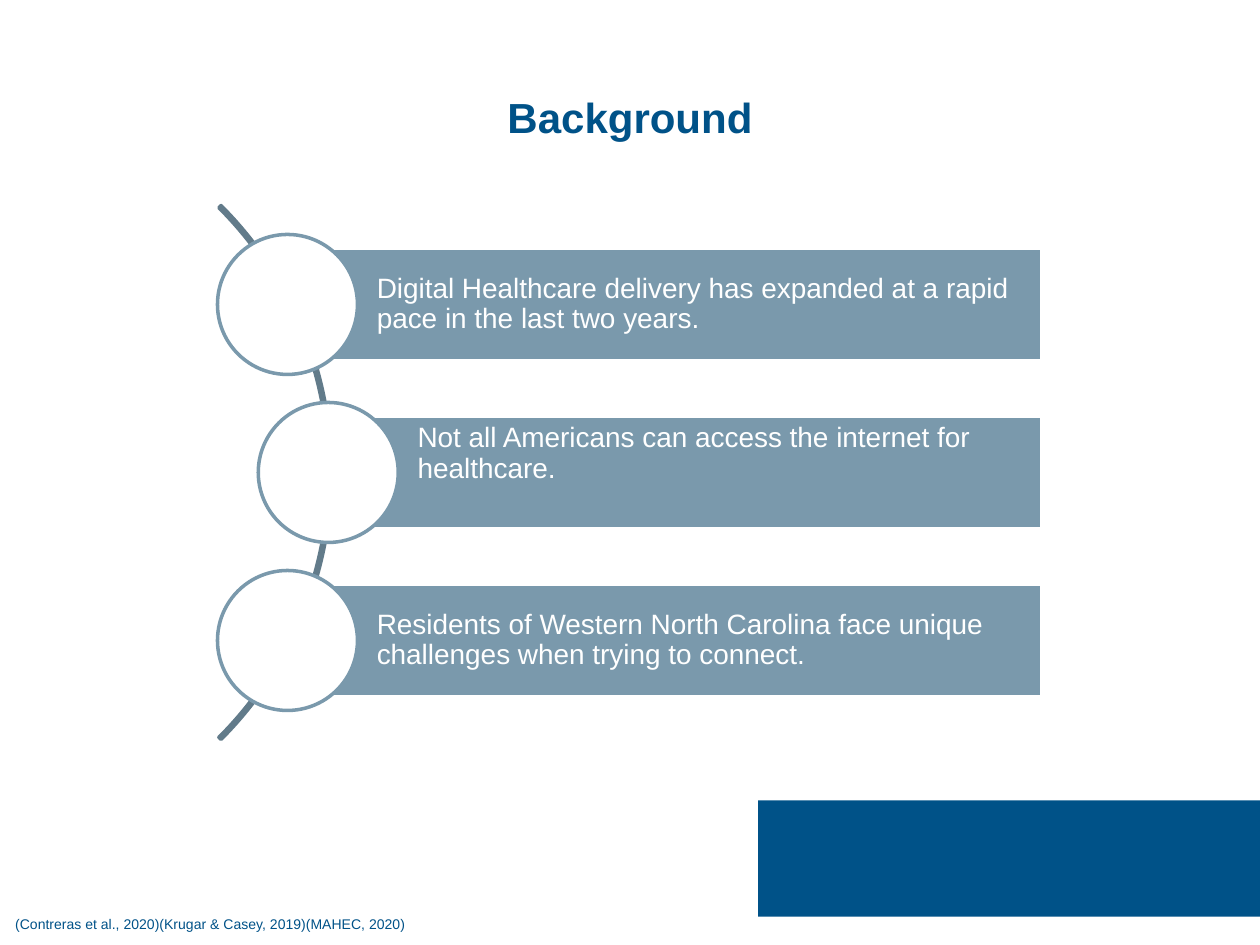
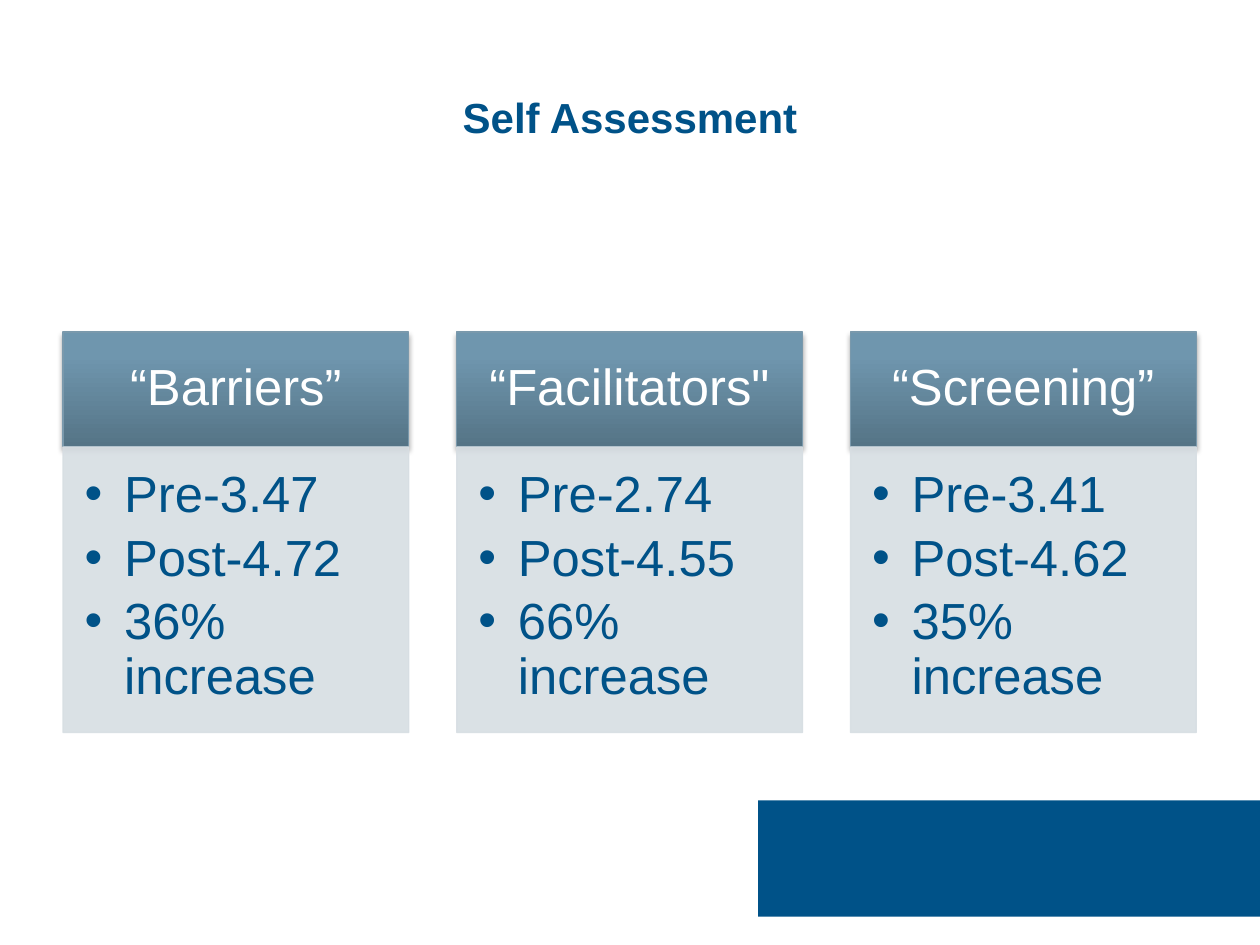
from dataclasses import dataclass
from typing import Optional

import lxml.etree
import pptx
import pptx.dml.color
import pptx.enum.shapes
import pptx.enum.text
import pptx.oxml.ns
import pptx.util

Pt = pptx.util.Pt
qn = pptx.oxml.ns.qn
SHAPES = pptx.enum.shapes.MSO_SHAPE
ALIGN = pptx.enum.text.PP_ALIGN
ANCHOR = pptx.enum.text.MSO_ANCHOR

# Shared look
FONT = "Arial"
NAVY = "005288"
STEEL = "7A99AC"
SLATE = "627B8A"
MIST = "D7DEE3"
WHITE = "FFFFFF"
HEADER_DARK, HEADER_LIGHT = "557486", "6F96AE"


@dataclass
class Box:
    left: float
    top: float
    width: float
    height: float

    def lengths(self) -> tuple:
        return Pt(self.left), Pt(self.top), Pt(self.width), Pt(self.height)


@dataclass
class Point:
    text: str
    left: float
    text_top: Optional[float] = None  # inset of top-anchored text


@dataclass
class Score:
    heading: str
    results: list[str]


TITLE_BOX = Box(36, 21.6, 648, 90)
BAND_BOX = Box(433.2, 457.4, 286.8, 66.4)
CITATION_BOX = Box(-143.3, 519.8, 382.3, 38.9)

# Background: bars on an arc
BAR_TOP, BAR_PITCH, BAR_HEIGHT, BAR_RIGHT = 142, 96, 64, 595.6
CIRCLE_SIZE = 80
ARC_LEFT, ARC_SIZE = -241.9, 431.4
POINTS = [
    Point("Digital Healthcare delivery has expanded at a rapid pace "
          "in the last two years.", 164.3),
    Point("Not all Americans can access the internet for healthcare.", 187.6, 4.1),
    Point("Residents of Western North Carolina face unique challenges "
          "when trying to connect.", 164.3),
]
CITATION = "(Contreras et al., 2020)(Krugar & Casey, 2019)(MAHEC, 2020)"

# Self Assessment: three columns
COLUMN_LEFT, COLUMN_PITCH, COLUMN_WIDTH = 36, 225, 197.6
HEADER_TOP, HEADER_HEIGHT, RESULTS_HEIGHT = 189.8, 65.6, 163.2
SCORES = [
    Score("“Barriers”", ["Pre-3.47", "Post-4.72", "36% increase"]),
    Score("“Facilitators\"", ["Pre-2.74", "Post-4.55", "66% increase"]),
    Score("“Screening”", ["Pre-3.41", "Post-4.62", "35% increase"]),
]


def rgb(value: str) -> pptx.dml.color.RGBColor:
    return pptx.dml.color.RGBColor.from_string(value)


def add_bullet(paragraph, indent: float) -> None:
    properties = paragraph._p.get_or_add_pPr()
    properties.set("marL", str(Pt(indent)))
    properties.set("indent", str(-Pt(indent)))
    lxml.etree.SubElement(properties, qn("a:buFont"), typeface=FONT)
    lxml.etree.SubElement(properties, qn("a:buChar"), char="•")


def write_text(shape, lines: list[str], *, size: float, color: str,
               bold: bool = False, align=ALIGN.LEFT, anchor=ANCHOR.MIDDLE,
               insets: tuple = (7.2, 3.6, 7.2, 3.6), line_spacing: float = 1.0,
               space_after: float = 0, bullet_indent: float = 0) -> None:
    frame = shape.text_frame
    frame.word_wrap = True
    frame.auto_size = pptx.enum.text.MSO_AUTO_SIZE.NONE
    frame.vertical_anchor = anchor
    (frame.margin_left, frame.margin_top,
     frame.margin_right, frame.margin_bottom) = map(Pt, insets)
    for number, line in enumerate(lines):
        paragraph = frame.add_paragraph() if number else frame.paragraphs[0]
        if bullet_indent:
            add_bullet(paragraph, bullet_indent)
        paragraph.alignment = align
        paragraph.line_spacing = line_spacing
        paragraph.space_after = Pt(space_after)
        run = paragraph.add_run()
        run.text = line
        run.font.name = FONT
        run.font.size = Pt(size)
        run.font.bold = bold
        run.font.color.rgb = rgb(color)


def add_figure(slide, kind, box: Box, fill: Optional[str],
               line: Optional[str] = None, line_width: float = 2):
    figure = slide.shapes.add_shape(kind, *box.lengths())
    figure.shadow.inherit = False
    if fill:
        figure.fill.solid()
        figure.fill.fore_color.rgb = rgb(fill)
    else:
        figure.fill.background()
    if line:
        figure.line.color.rgb = rgb(line)
        figure.line.width = Pt(line_width)
    else:
        figure.line.fill.background()
    return figure


def set_opacity(figure, percent: int) -> None:
    for color in figure.element.spPr.iter(qn("a:srgbClr")):
        lxml.etree.SubElement(color, qn("a:alpha"), val=str(percent * 1000))


def add_soft_shadow(figure) -> None:
    effects = figure.element.spPr.find(qn("a:effectLst"))
    shadow = lxml.etree.SubElement(
        effects, qn("a:outerShdw"), blurRad=str(Pt(3.1)), dist=str(Pt(1.8)),
        dir="5400000", rotWithShape="0")
    color = lxml.etree.SubElement(shadow, qn("a:srgbClr"), val="000000")
    lxml.etree.SubElement(color, qn("a:alpha"), val="35000")


def shade_header(header) -> None:
    header.fill.gradient()
    header.fill.gradient_angle = 90
    stops = header.fill.gradient_stops
    for stop, color, position in zip(stops, (HEADER_DARK, HEADER_LIGHT), (0, 0.8)):
        stop.color.rgb = rgb(color)
        stop.position = position


def start_slide(deck, title: str):
    slide = deck.slides.add_slide(deck.slide_layouts[5])
    add_figure(slide, SHAPES.RECTANGLE, BAND_BOX, NAVY)
    heading = slide.shapes.title
    heading.left, heading.top, heading.width, heading.height = TITLE_BOX.lengths()
    write_text(heading, [title], size=24, color=NAVY, bold=True, align=ALIGN.CENTER)
    return slide


def add_point(slide, point: Point, top: float) -> None:
    bar = add_figure(slide, SHAPES.RECTANGLE,
                     Box(point.left, top, BAR_RIGHT - point.left, BAR_HEIGHT),
                     STEEL, WHITE)
    at_top = point.text_top is not None
    write_text(bar, [point.text], size=16, color=WHITE, line_spacing=0.9,
               anchor=ANCHOR.TOP if at_top else ANCHOR.MIDDLE,
               insets=(51, point.text_top if at_top else 3, 3, 3))
    add_figure(slide, SHAPES.OVAL,
               Box(point.left - CIRCLE_SIZE / 2, top + (BAR_HEIGHT - CIRCLE_SIZE) / 2,
                   CIRCLE_SIZE, CIRCLE_SIZE), WHITE, STEEL)


def build_background(deck) -> None:
    slide = start_slide(deck, "Background")
    citation = slide.shapes.add_textbox(*CITATION_BOX.lengths())
    write_text(citation, [CITATION], size=8, color=NAVY, align=ALIGN.RIGHT,
               anchor=ANCHOR.TOP)

    # Arc centred on the middle bar
    middle = BAR_TOP + BAR_PITCH + BAR_HEIGHT / 2
    arc = add_figure(slide, SHAPES.BLOCK_ARC,
                     Box(ARC_LEFT, middle - ARC_SIZE / 2, ARC_SIZE, ARC_SIZE),
                     None, SLATE)
    for index, value in enumerate((189, 27, 0.004)):
        arc.adjustments[index] = value

    for row, point in enumerate(POINTS):
        add_point(slide, point, BAR_TOP + row * BAR_PITCH)


def add_score(slide, score: Score, left: float) -> None:
    header = add_figure(slide, SHAPES.RECTANGLE,
                        Box(left, HEADER_TOP, COLUMN_WIDTH, HEADER_HEIGHT),
                        STEEL, STEEL, 0.75)
    shade_header(header)
    add_soft_shadow(header)
    write_text(header, [score.heading], size=29, color=WHITE, align=ALIGN.CENTER,
               insets=(16.5, 9.4, 16.5, 9.4), line_spacing=0.9)

    results = add_figure(slide, SHAPES.RECTANGLE,
                         Box(left, HEADER_TOP + HEADER_HEIGHT,
                             COLUMN_WIDTH, RESULTS_HEIGHT), MIST, MIST, 0.75)
    set_opacity(results, 90)
    write_text(results, score.results, size=29, color=NAVY, anchor=ANCHOR.TOP,
               insets=(12.4, 12.4, 16.5, 18.5), line_spacing=0.9,
               space_after=5, bullet_indent=22.5)


def build_self_assessment(deck) -> None:
    slide = start_slide(deck, "Self Assessment")
    for column, score in enumerate(SCORES):
        add_score(slide, score, COLUMN_LEFT + column * COLUMN_PITCH)


def main() -> None:
    deck = pptx.Presentation()
    deck.slide_width, deck.slide_height = Pt(720), Pt(540)
    build_background(deck)
    build_self_assessment(deck)
    deck.save("out.pptx")


if __name__ == "__main__":
    main()
